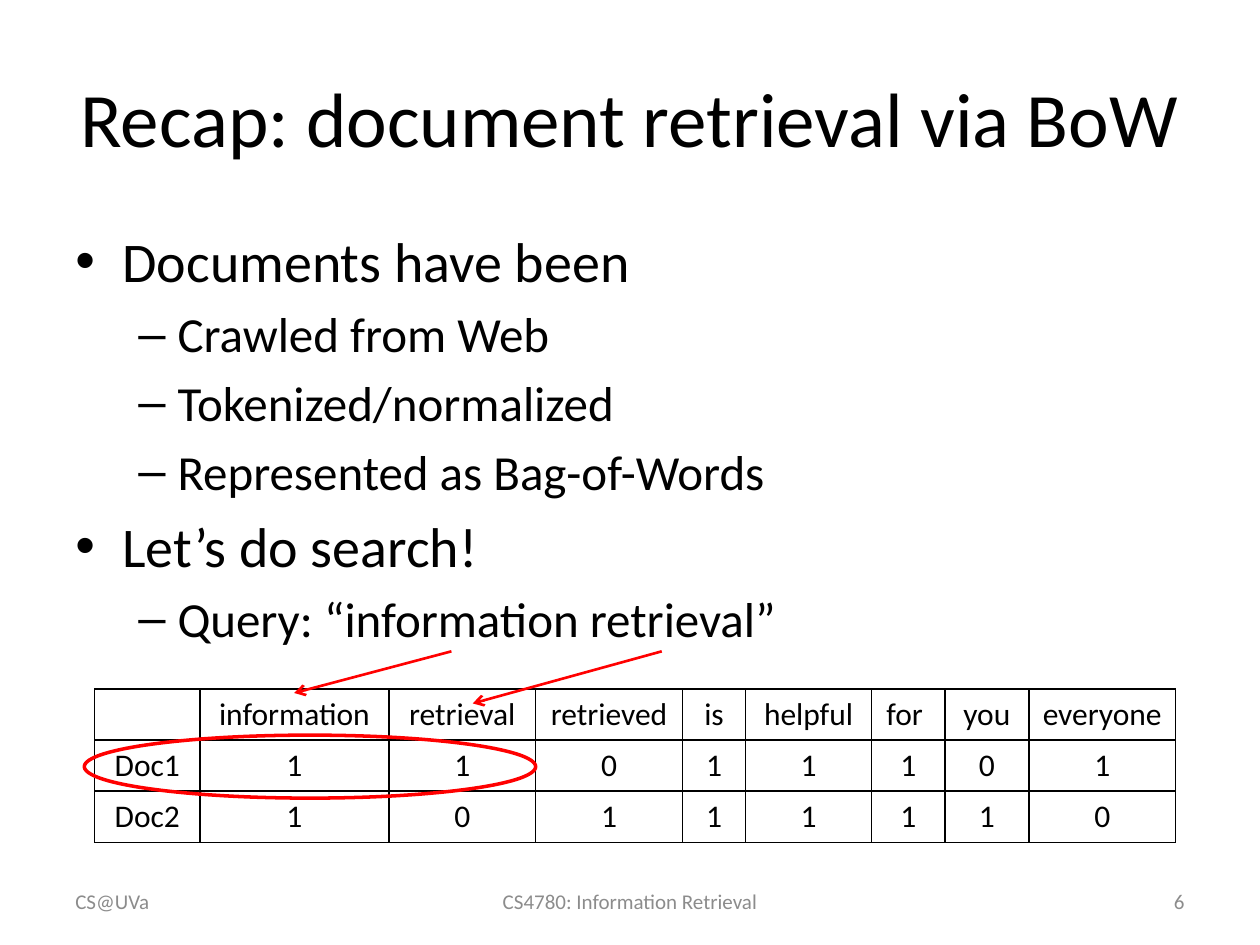
import dataclasses
import typing

import lxml.etree
import pptx
import pptx.dml.color
import pptx.enum.shapes
import pptx.enum.text
import pptx.oxml
import pptx.oxml.ns
import pptx.util

Cm = pptx.util.Cm
Pt = pptx.util.Pt
ALIGN = pptx.enum.text.PP_ALIGN
ANCHOR = pptx.enum.text.MSO_ANCHOR
qn = pptx.oxml.ns.qn

HUES = {"ink": "000000", "mark": "FF0000", "note": "8C8C8C"}
WIDTHS = (2.12, 3.81, 2.96, 2.96, 1.27, 2.54, 1.48, 1.69, 2.96)
GRID = (
    ("", "information", "retrieval", "retrieved", "is", "helpful", "for ", "you", "everyone"),
    ("Doc1", "1", "1", "0", "1", "1", "1", "0", "1"),
    ("Doc2", "1", "0", "1", "1", "1", "1", "1", "0"),
)


@dataclasses.dataclass(frozen=True)
class Point:
    text: str
    level: int = 0


@dataclasses.dataclass(frozen=True)
class Level:
    size: int
    left: float
    hang: float
    mark: str


@dataclasses.dataclass(frozen=True)
class Arrow:
    start: tuple[float, float]
    end: tuple[float, float]


@dataclasses.dataclass(frozen=True)
class Note:
    text: str
    left: float
    width: float
    align: typing.Any


LEVELS = (Level(32, 0.95, 0.95, "•"), Level(28, 2.06, 0.79, "–"))
POINTS = (
    Point("Documents have been"),
    Point("Crawled from Web", 1),
    Point("Tokenized/normalized", 1),
    Point("Represented as Bag-of-Words", 1),
    Point("Let’s do search!"),
    Point("Query: “information retrieval”", 1),
)
ARROWS = (
    Arrow((9.1, 13.13), (5.93, 13.97)),
    Arrow((13.34, 13.13), (9.53, 14.18)),
)
NOTES = (
    Note("CS4780: Information Retrieval", 8.68, 8.04, ALIGN.CENTER),
    Note("CS@UVa", 1.27, 5.93, ALIGN.LEFT),
    Note("6", 18.2, 5.93, ALIGN.RIGHT),
)


def style(item: typing.Any, form: dict[str, typing.Any]) -> None:
    for name, value in form.items():
        setattr(item, name, value)


def tint(name: str) -> pptx.dml.color.RGBColor:
    return pptx.dml.color.RGBColor.from_string(HUES[name])


def write(para: typing.Any, text: str, size: int, hue: str, align: typing.Any) -> None:
    para.alignment = align
    font = para.font
    if text:
        run = para.add_run()
        run.text = text
        font = run.font
    style(font, {"name": "Calibri", "size": Pt(size)})
    font.color.rgb = tint(hue)


def add_box(slide: typing.Any, left: float, top: float, width: float, height: float,
            anchor: typing.Any) -> typing.Any:
    frame = slide.shapes.add_textbox(Cm(left), Cm(top), Cm(width), Cm(height)).text_frame
    style(frame, {"word_wrap": True, "vertical_anchor": anchor})
    return frame


def add_title(slide: typing.Any) -> None:
    title = slide.shapes.title
    style(title, {"left": Cm(1.27), "top": Cm(0.76), "width": Cm(22.86), "height": Cm(3.18)})
    style(title.text_frame, {"word_wrap": True, "vertical_anchor": ANCHOR.MIDDLE})
    write(title.text_frame.paragraphs[0], "Recap: document retrieval via BoW",
          44, "ink", ALIGN.CENTER)


def add_points(slide: typing.Any) -> None:
    frame = add_box(slide, 1.27, 4.45, 22.86, 12.57, ANCHOR.TOP)
    for spot, point in enumerate(POINTS):
        para = frame.add_paragraph() if spot else frame.paragraphs[0]
        level = LEVELS[point.level]
        write(para, point.text, level.size, "ink", ALIGN.LEFT)
        style(para, {"level": point.level, "space_before": Pt(level.size * 0.2)})
        props = para._p.get_or_add_pPr()
        props.set("marL", str(Cm(level.left)))
        props.set("indent", str(-Cm(level.hang)))
        lxml.etree.SubElement(props, qn("a:buFont"), typeface="Arial")
        lxml.etree.SubElement(props, qn("a:buChar"), char=level.mark)


def add_edges(cell: typing.Any) -> None:
    props = cell._tc.get_or_add_tcPr()
    for spot, side in enumerate(("lnL", "lnR", "lnT", "lnB")):
        edge = lxml.etree.Element(qn(f"a:{side}"), w=str(Pt(1)))
        fill = lxml.etree.SubElement(edge, qn("a:solidFill"))
        lxml.etree.SubElement(fill, qn("a:srgbClr"), val=HUES["ink"])
        props.insert(spot, edge)


def add_grid(slide: typing.Any) -> None:
    table = slide.shapes.add_table(len(GRID), len(WIDTHS), Cm(1.91), Cm(13.89),
                                   Cm(sum(WIDTHS)), Cm(3.09)).table
    style(table, {"first_row": False, "horz_banding": False})
    for col, width in zip(table.columns, WIDTHS):
        col.width = Cm(width)
    for row, words in zip(table.rows, GRID):
        row.height = Cm(1.03)
        for cell, word in zip(row.cells, words):
            cell.fill.background()
            write(cell.text_frame.paragraphs[0], word, 18, "ink", ALIGN.CENTER)
            add_edges(cell)


def add_arrow(slide: typing.Any, arrow: Arrow) -> None:
    ends = (Cm(size) for size in arrow.start + arrow.end)
    link = slide.shapes.add_connector(pptx.enum.shapes.MSO_CONNECTOR.STRAIGHT, *ends)
    link.line.width = Pt(1.5)
    link.line.color.rgb = tint("mark")
    lxml.etree.SubElement(link.line._get_or_add_ln(), qn("a:tailEnd"), type="arrow")
    lxml.etree.SubElement(link._element.spPr, qn("a:effectLst"))


def add_ring(slide: typing.Any) -> None:
    ring = slide.shapes.add_shape(pptx.enum.shapes.MSO_SHAPE.OVAL,
                                  Cm(1.7), Cm(14.82), Cm(9.1), Cm(1.27))
    ring.shadow.inherit = False
    ring.fill.background()
    ring.line.width = Pt(2)
    ring.line.color.rgb = tint("mark")


def add_note(slide: typing.Any, note: Note) -> None:
    frame = add_box(slide, note.left, 17.65, note.width, 1.02, ANCHOR.MIDDLE)
    write(frame.paragraphs[0], note.text, 12, "note", note.align)


def main() -> None:
    deck = pptx.Presentation()
    style(deck, {"slide_width": Cm(25.4), "slide_height": Cm(19.05)})
    slide = deck.slides.add_slide(deck.slide_layouts.get_by_name("Title Only"))
    add_title(slide)
    add_points(slide)
    add_grid(slide)
    for arrow in ARROWS:
        add_arrow(slide, arrow)
    add_ring(slide)
    for note in NOTES:
        add_note(slide, note)
    deck.save("out.pptx")


if __name__ == "__main__":
    main()
